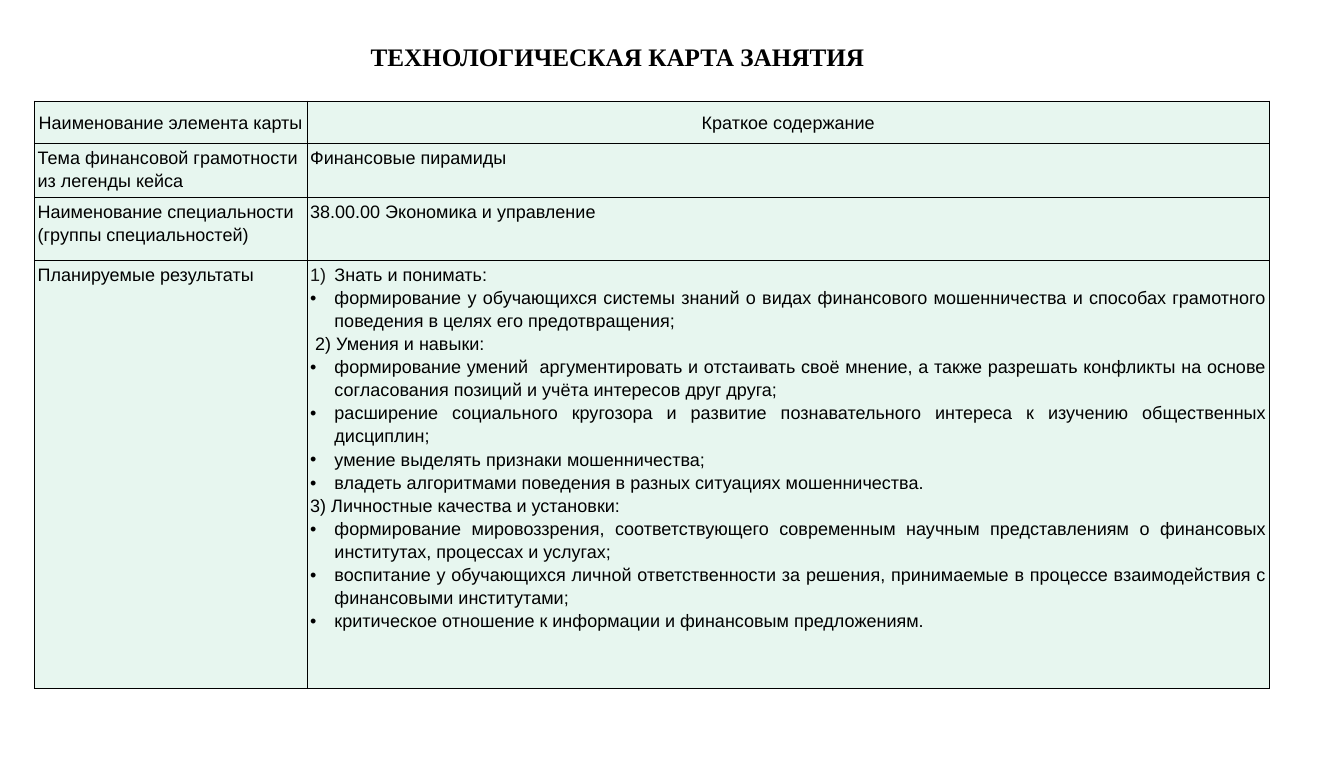
"""Build the lesson plan slide with its title and two-column table."""
from pptx import Presentation
from pptx.dml.color import RGBColor
from pptx.enum import text as t
from pptx.oxml import parse_xml
from pptx.oxml.ns import nsdecls
from pptx.util import Pt

BLACK = RGBColor(0, 0, 0)
NUMBER_GREY = RGBColor(0x18, 0x18, 0x18)
MINT = RGBColor(0xE7, 0xF6, 0xEF)
LEFT, CENTER, JUSTIFY = t.PP_ALIGN.LEFT, t.PP_ALIGN.CENTER, t.PP_ALIGN.JUSTIFY
BULLET = '<a:buChar {} char="•"/>'
NUMBER = '<a:buAutoNum {} type="arabicParenR"/>'


def write(frame, text, align=LEFT, size=20, font="Arial", bold=False, marker=None, marker_color=BLACK):
    paragraph = frame.paragraphs[0]
    if paragraph.runs:
        paragraph = frame.add_paragraph()
    if marker:
        properties = paragraph._p.get_or_add_pPr()
        properties.set("marL", str(Pt(27)))
        properties.set("indent", str(Pt(-27)))
        properties.append(parse_xml(f'<a:buClr {nsdecls("a")}><a:srgbClr val="{marker_color}"/></a:buClr>'))
        properties.append(parse_xml(f'<a:buFont {nsdecls("a")} typeface="Arial"/>'))
        properties.append(parse_xml(marker.format(nsdecls("a"))))
    paragraph.alignment = align
    paragraph.line_spacing = 1.15
    paragraph.space_before = Pt(0)
    run = paragraph.add_run()
    run.text = text
    run.font.name = font
    run.font.size = Pt(size)
    run.font.bold = bold
    run.font.color.rgb = BLACK


presentation = Presentation()
presentation.slide_width, presentation.slide_height = Pt(1494), Pt(841.7)
slide = presentation.slides.add_slide(presentation.slide_layouts[5])

heading = slide.shapes.title
heading.left, heading.top, heading.width, heading.height = Pt(400.3), Pt(36.7), Pt(571.7), Pt(46)
heading.text_frame.word_wrap = False
heading.text_frame.auto_size = t.MSO_AUTO_SIZE.SHAPE_TO_FIT_TEXT
write(heading.text_frame, "ТЕХНОЛОГИЧЕСКАЯ КАРТА ЗАНЯТИЯ", align=CENTER, size=28, font="Times New Roman", bold=True)

bulleted = dict(align=JUSTIFY, marker=BULLET)
numbered = dict(align=JUSTIFY, marker=NUMBER, marker_color=NUMBER_GREY)
centered, justified, plain = dict(align=CENTER), dict(align=JUSTIFY), {}

results = [
    ("Знать и понимать:", numbered),
    ("формирование у обучающихся системы знаний о видах финансового мошенничества и способах "
     "грамотного поведения в целях его предотвращения;", bulleted),
    (" 2) Умения и навыки:", justified),
    ("формирование умений  аргументировать и отстаивать своё мнение, а также разрешать конфликты "
     "на основе согласования позиций и учёта интересов друг друга;", bulleted),
    ("расширение социального кругозора и развитие познавательного интереса к изучению "
     "общественных дисциплин;", bulleted),
    ("умение выделять признаки мошенничества;", bulleted),
    ("владеть алгоритмами поведения в разных ситуациях мошенничества.", bulleted),
    ("3) Личностные качества и установки:", plain),
    ("формирование мировоззрения, соответствующего современным научным представлениям о "
     "финансовых институтах, процессах и услугах;", bulleted),
    ("воспитание у обучающихся личной ответственности за решения, принимаемые в процессе "
     "взаимодействия с финансовыми институтами;", bulleted),
    ("критическое отношение к информации и финансовым предложениям.", bulleted),
]
plan_rows = [
    (47, [("Наименование элемента карты", centered)], [("Краткое содержание", centered)]),
    (60, [("Тема финансовой грамотности из легенды кейса", plain)], [("Финансовые пирамиды", justified)]),
    (70, [("Наименование специальности", plain), ("(группы специальностей)", plain)],
     [("38.00.00 Экономика и управление", justified)]),
    (476.5, [("Планируемые результаты", plain)], results),
]

plan = slide.shapes.add_table(len(plan_rows), 2, Pt(38.2), Pt(112.3), Pt(1373), Pt(653.5)).table
plan.horz_banding = False
plan.first_row = False
for column, width in zip(plan.columns, (303, 1070)):
    column.width = Pt(width)

for row_index, (height, *contents) in enumerate(plan_rows):
    plan.rows[row_index].height = Pt(height)
    for column_index, content in enumerate(contents):
        cell = plan.cell(row_index, column_index)
        cell.margin_left = cell.margin_right = Pt(3.6)
        cell.margin_top = cell.margin_bottom = Pt(2.2)
        cell.vertical_anchor = t.MSO_ANCHOR.TOP if row_index else t.MSO_ANCHOR.MIDDLE
        for side in "LRTB":
            cell._tc.get_or_add_tcPr().append(parse_xml(
                f'<a:ln{side} {nsdecls("a")} w="{Pt(1)}"><a:solidFill>'
                f'<a:srgbClr val="{BLACK}"/></a:solidFill></a:ln{side}>'))
        cell.fill.solid()
        cell.fill.fore_color.rgb = MINT
        for text, style in content:
            write(cell.text_frame, text, **style)

presentation.save("out.pptx")
